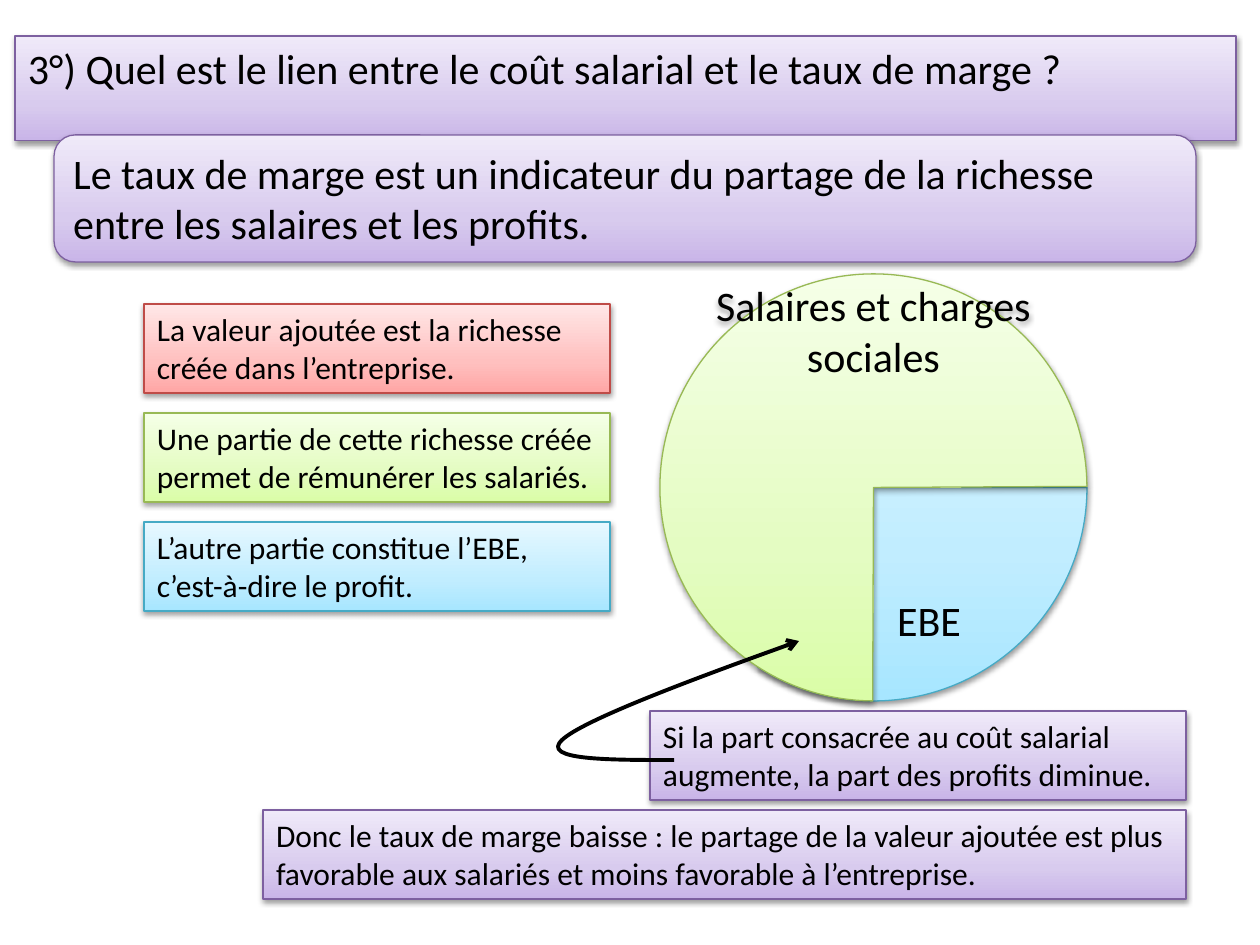
from copy import deepcopy

from lxml.etree import SubElement
from pptx import Presentation
from pptx.dml.color import RGBColor
from pptx.enum.shapes import MSO_SHAPE as Preset
from pptx.enum.text import MSO_ANCHOR as Anchor, MSO_AUTO_SIZE as AutoSize, PP_ALIGN as Align
from pptx.oxml.ns import qn
from pptx.util import Pt

SCALE = 914400 / 126
PURPLE = ("C9B5E8", "D8CBEE", "F0EAF9", "7D60A0")
GREEN = ("DAFDA7", "E4FCC2", "F5FFE7", "98B955")
RED = ("FFA6A5", "FFC0BF", "FFE7E7", "BF4C48")
BLUE = ("A7E6FF", "C1EDFF", "E7F8FF", "46AAC5")


def px(length):
    return round(length * SCALE)


def color(hex_value):
    return RGBColor.from_string(hex_value)


def write(shape, text, size=18, align=Align.LEFT, anchor=Anchor.TOP, grow=True, left=13, bottom=6):
    frame = shape.text_frame
    frame.word_wrap = True
    frame.auto_size = AutoSize.SHAPE_TO_FIT_TEXT if grow else AutoSize.NONE
    frame.vertical_anchor = anchor
    frame.margin_left, frame.margin_right = px(left), px(13)
    frame.margin_top, frame.margin_bottom = px(6), px(bottom)
    paragraph = frame.paragraphs[0]
    paragraph.alignment = align
    run = paragraph.add_run()
    run.text = text
    run.font.name = "Calibri"
    run.font.size = Pt(size)
    run.font.color.rgb = color("000000")


def paint(shape, palette):
    *shades, outline = palette
    shape.fill.gradient()
    shape.fill.gradient_angle = 90
    properties = shape._element.spPr
    stop_list = properties.find(".//" + qn("a:gsLst"))
    stop_list.append(deepcopy(stop_list[0]))
    for stop, shade, position in zip(shape.fill.gradient_stops, shades, (0, 0.35, 1)):
        stop.color.rgb = color(shade)
        stop.position = position
    shape.line.color.rgb = color(outline)
    shape.line.width = Pt(0.75)
    shape.shadow.inherit = False
    effects = properties.find(qn("a:effectLst"))
    shadow = SubElement(effects, qn("a:outerShdw"), blurRad="40000", dist="20000",
                        dir="5400000", rotWithShape="0")
    shade = SubElement(shadow, qn("a:srgbClr"), val="000000")
    SubElement(shade, qn("a:alpha"), val="38000")


def add_panel(slide, box, preset, palette):
    panel = slide.shapes.add_shape(preset, *map(px, box))
    paint(panel, palette)
    return panel


def add_question(slide, box, text):
    question = slide.shapes.title
    question.left, question.top, question.width, question.height = map(px, box)
    geometry = SubElement(question._element.spPr, qn("a:prstGeom"), prst="roundRect")
    SubElement(geometry, qn("a:avLst"))
    paint(question, PURPLE)
    write(question, text, size=24)


def add_explanations(slide, box, explanations):
    left, top, width, height = box
    card_height = 89
    step = (height - card_height) // (len(explanations) - 1)
    for row, (text, palette) in enumerate(explanations):
        card = add_panel(slide, (left, top + row * step, width, card_height),
                         Preset.RECTANGLE, palette)
        write(card, text)


def add_sector(slide, box, palette, start, end):
    sector = add_panel(slide, box, Preset.PIE, palette)
    for index, degrees in enumerate((start, end)):
        sector.adjustments[index] = degrees * 0.6
    return sector


def add_sharing(slide, box):
    profit = add_sector(slide, box, BLUE, 0, 123)
    write(profit, "EBE", size=24, align=Align.CENTER, anchor=Anchor.BOTTOM,
          grow=False, left=124, bottom=56)
    wages = add_sector(slide, box, GREEN, 90.2, 359.73)
    write(wages, "Salaires et charges sociales", size=24, align=Align.CENTER, grow=False)


def add_conclusions(slide, box, conclusions):
    left, top, width, height = box
    card_height = 89
    step = (height - card_height) // (len(conclusions) - 1)
    for row, (text, card_width) in enumerate(conclusions):
        card = add_panel(slide, (left + width - card_width, top + row * step,
                                 card_width, card_height), Preset.RECTANGLE, PURPLE)
        write(card, text)


def add_curved_arrow(slide, box):
    left, top, width, height = box
    start = (133, height)
    bends = [(66, height), (0, height), (21, 99), (41, 80), (149, 39), (width, 0)]
    builder = slide.shapes.build_freeform(*start, scale=SCALE)
    builder.add_line_segments(bends, close=False)
    arrow = builder.convert_to_shape(px(left), px(top))
    outline = arrow._element.spPr.find(".//" + qn("a:path"))
    segments = outline.findall(qn("a:lnTo"))
    for first in range(0, len(segments), 3):
        curve = SubElement(outline, qn("a:cubicBezTo"))
        for segment in segments[first:first + 3]:
            curve.append(segment[0])
            outline.remove(segment)
    arrow.fill.background()
    arrow.line.color.rgb = color("000000")
    arrow.line.width = Pt(2.25)
    SubElement(arrow._element.spPr.find(qn("a:ln")), qn("a:tailEnd"), type="arrow")
    arrow.shadow.inherit = False


def main():
    deck = Presentation()
    deck.slide_width, deck.slide_height = px(1260), px(945)
    slide = deck.slides.add_slide(deck.slide_layouts[5])
    add_question(slide, (15, 36, 1221, 71),
                 "3°) Quel est le lien entre le coût salarial et le taux de marge ?")
    definition = add_panel(slide, (54, 135, 1142, 127), Preset.ROUNDED_RECTANGLE, PURPLE)
    write(definition, "Le taux de marge est un indicateur du partage de la richesse "
                      "entre les salaires et les profits.", size=24)
    add_sharing(slide, (660, 274, 427, 427))
    add_explanations(slide, (144, 304, 466, 307), [
        ("La valeur ajoutée est la richesse créée dans l’entreprise.", RED),
        ("Une partie de cette richesse créée permet de rémunérer les salariés.", GREEN),
        ("L’autre partie constitue l’EBE, c’est-à-dire le profit.", BLUE),
    ])
    add_conclusions(slide, (263, 711, 923, 188), [
        ("Si la part consacrée au coût salarial augmente, la part des profits diminue.", 536),
        ("Donc le taux de marge baisse : le partage de la valeur ajoutée est plus "
         "favorable aux salariés et moins favorable à l’entreprise.", 923),
    ])
    add_curved_arrow(slide, (541, 641, 258, 119))
    deck.save("out.pptx")


if __name__ == "__main__":
    main()
